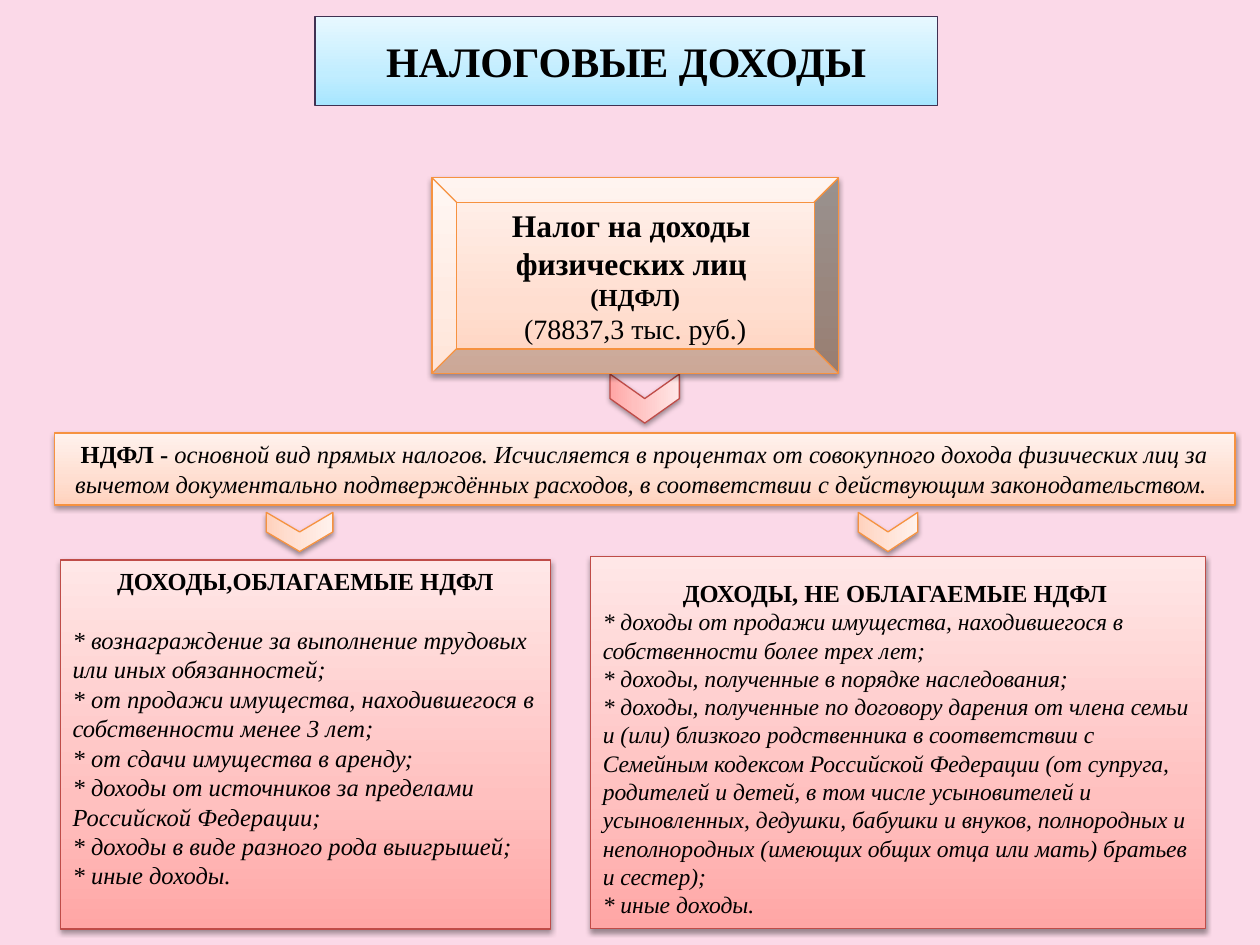
import copy
import pptx
import pptx.util
import pptx.dml.color
import pptx.enum.shapes
import pptx.enum.text
import pptx.oxml
import pptx.oxml.ns

Pt = pptx.util.Pt
KIND = pptx.enum.shapes.MSO_SHAPE
ALIGN = pptx.enum.text.PP_ALIGN
ANCHOR = pptx.enum.text.MSO_ANCHOR

BLUE = ["A7E6FF", "C1EDFF", "E7F8FF"], "403152"
PEACH = ["FFD2BD", "FFDED0", "FFF2ED"], "F69240"
ROSE = ["FFA6A5", "FFC0BF", "FFE7E7"], "BF4C48"

TAXED = [
    "* вознаграждение за выполнение трудовых или иных обязанностей;",
    "* от продажи имущества, находившегося в собственности менее 3 лет;",
    "* от сдачи имущества в аренду;",
    "* доходы от источников за пределами Российской Федерации;",
    "* доходы в виде разного рода выигрышей;",
    "* иные доходы.",
]
EXEMPT = [
    "* доходы от продажи имущества, находившегося в собственности более трех лет;",
    "* доходы, полученные в порядке наследования;",
    "* доходы, полученные по договору дарения от члена семьи и (или) близкого "
    "родственника в соответствии с Семейным кодексом Российской Федерации "
    "(от супруга, родителей и детей, в том числе усыновителей и усыновленных, "
    "дедушки, бабушки и внуков, полнородных и неполнородных (имеющих общих отца "
    "или мать) братьев и сестер);",
    "* иные доходы.",
]


def color(code):
    return pptx.dml.color.RGBColor.from_string(code)


def shade(shape, tones):
    fill = shape.fill
    fill.gradient()
    fill.gradient_angle = 90
    stops = shape._element.spPr.find(".//" + pptx.oxml.ns.qn("a:gsLst"))
    stops.insert(1, copy.deepcopy(stops[0]))
    for stop, place, tone in zip(fill.gradient_stops, (0, 0.35, 1), tones):
        stop.color.rgb = color(tone)
        stop.position = place


def cast(shape):
    effect = shape._element.spPr.find(pptx.oxml.ns.qn("a:effectLst"))
    effect.append(pptx.oxml.parse_xml(
        f'<a:outerShdw {pptx.oxml.ns.nsdecls("a")} blurRad="{Pt(3.1)}" '
        f'dist="{Pt(1.6)}" dir="5400000" rotWithShape="0">'
        '<a:srgbClr val="000000"><a:alpha val="38000"/></a:srgbClr>'
        '</a:outerShdw>'))


def add_box(slide, kind, place, theme, shadow=True):
    tones, edge = theme
    shape = slide.shapes.add_shape(kind, *map(Pt, place))
    shade(shape, tones)
    shape.line.color.rgb = color(edge)
    shape.line.width = Pt(0.75)
    shape.shadow.inherit = False
    if shadow:
        cast(shape)
    frame = shape.text_frame
    frame.word_wrap = True
    frame.vertical_anchor = ANCHOR.TOP
    return shape


def add_arrow(slide, place, theme):
    add_box(slide, KIND.CHEVRON, place, theme).rotation = 90


def style(run, size, bold=False, italic=False):
    font = run.font
    font.name = "Times New Roman"
    font.size = Pt(size)
    font.bold = bold
    font.italic = italic
    font.color.rgb = color("000000")


def write(shape, rows):
    frame = shape.text_frame
    frame.text = "\n".join(row[0] for row in rows)
    for para, (_, size, bold) in zip(frame.paragraphs, rows):
        para.alignment = ALIGN.CENTER
        style(para.runs[0], size, bold)


def add_list(slide, place, head, items, size):
    shape = add_box(slide, KIND.RECTANGLE, place, ROSE)
    write(shape, [(head, 14, True)])
    for item in items:
        para = shape.text_frame.add_paragraph()
        para.text = item
        para.alignment = ALIGN.LEFT
        style(para.runs[0], size, italic=True)
    return shape.text_frame.paragraphs[0]


def main():
    deck = pptx.Presentation()
    deck.slide_width, deck.slide_height = Pt(720), Pt(540)
    slide = deck.slides.add_slide(deck.slide_layouts[6])
    back = slide.background.fill
    back.solid()
    back.fore_color.rgb = color("FBD9E8")

    title = add_box(slide, KIND.RECTANGLE, (180, 9.4, 355.7, 51), BLUE, False)
    title.text_frame.vertical_anchor = ANCHOR.MIDDLE
    title.text_frame.word_wrap = False
    write(title, [("НАЛОГОВЫЕ ДОХОДЫ", 24, True)])

    add_arrow(slide, (354.4, 208, 28, 39.6), ROSE)

    band = add_box(slide, KIND.RECTANGLE, (31, 247.4, 674.8, 41.2), PEACH)
    write(band, [("НДФЛ - ", 14, True)])
    run = band.text_frame.paragraphs[0].add_run()
    run.text = (
        "основной вид прямых налогов. Исчисляется в процентах от совокупного "
        "дохода физических лиц за вычетом документально подтверждённых расходов, "
        "в соответствии с действующим законодательством. ")
    style(run, 14, italic=True)

    tax = add_box(slide, KIND.BEVEL, (246.8, 101.6, 232.4, 111.8), PEACH)
    tax.text_frame.vertical_anchor = ANCHOR.MIDDLE
    write(tax, [
        ("Налог на доходы ", 18, True),
        ("физических лиц ", 18, True),
        ("(НДФЛ)", 14, True),
        ("(78837,3 тыс. руб.)", 16, False),
    ])

    head = add_list(slide, (34.4, 320, 280.2, 210.8),
                    "ДОХОДЫ,ОБЛАГАЕМЫЕ НДФЛ", TAXED, 14)
    head.space_after = Pt(16.8)
    head = add_list(slide, (337.4, 318.2, 351.6, 212.6),
                    "ДОХОДЫ, НЕ ОБЛАГАЕМЫЕ НДФЛ ", EXEMPT, 13.5)
    head.line_spacing = 1.5

    add_arrow(slide, (496.2, 287, 22.4, 34), PEACH)
    add_arrow(slide, (160, 285, 22.4, 38), PEACH)
    deck.save("out.pptx")


if __name__ == "__main__":
    main()
